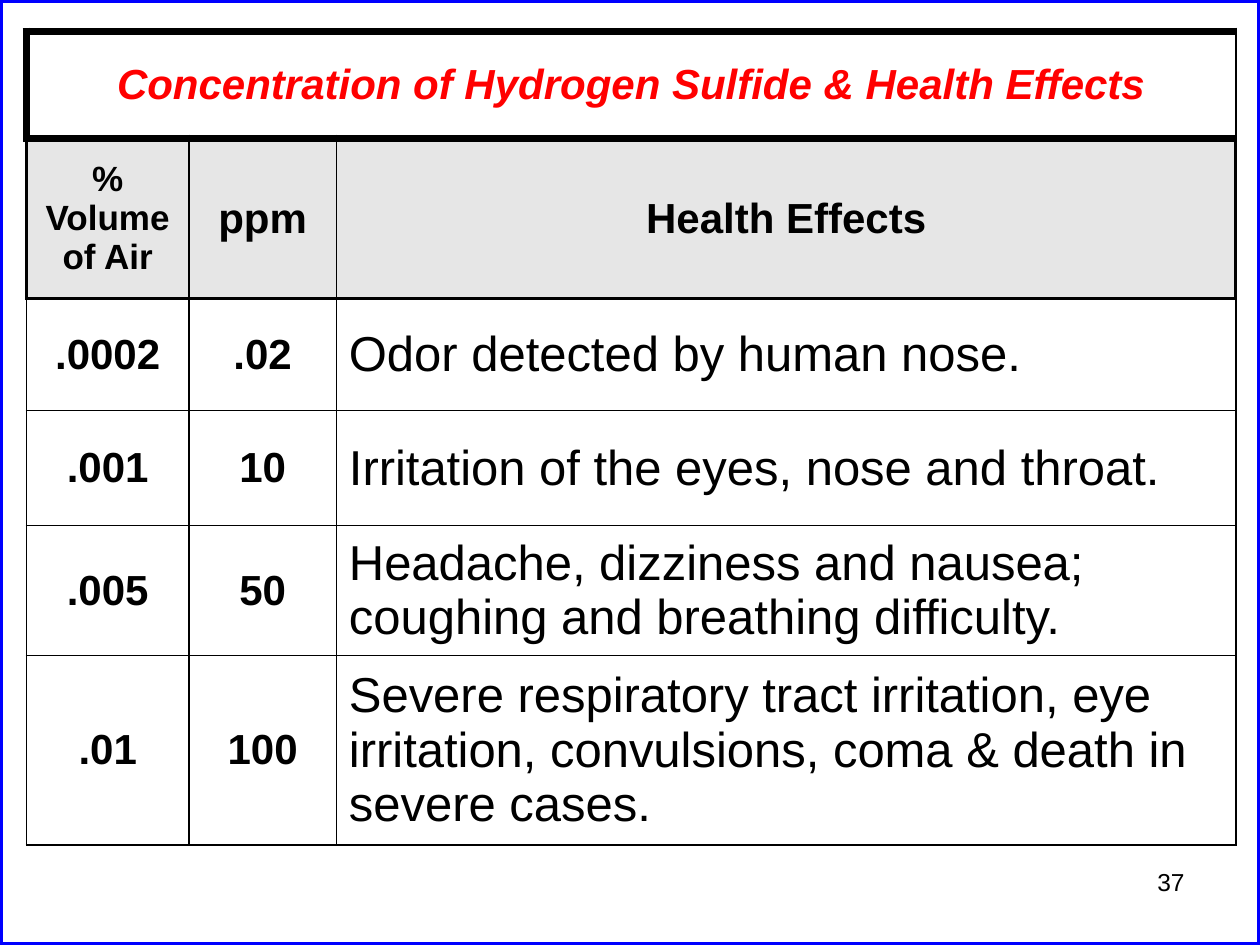
"""Build the slide on hydrogen sulfide concentrations and their health effects."""
from dataclasses import dataclass

from lxml import etree
from pptx import Presentation
from pptx import util as u
from pptx.dml.color import RGBColor
from pptx.enum import shapes, text
from pptx.oxml.ns import qn


@dataclass(frozen=True)
class Theme:
    font: str = "Arial"
    ink: str = "000000"
    accent: str = "FF0000"
    frame: str = "0000FF"
    paper: str = "FFFFFF"
    header: str = "E6E6E6"
    small: int = 14
    label: int = 20
    value: int = 24
    body: int = 28
    thin: int = 1
    medium: int = 2
    heavy: int = 5


@dataclass(frozen=True)
class Style:
    size: int
    color: str = "000000"
    bold: bool = True
    italic: bool = False
    align: text.PP_ALIGN = text.PP_ALIGN.CENTER


@dataclass(frozen=True)
class Row:
    height: float
    texts: tuple[str, ...]
    styles: tuple[Style, ...]
    top: int
    bottom: int
    side: int
    fill: str | None = None


THEME = Theme()
WIDTH, HEIGHT = 10, 7.5
COLUMNS = (1.29, 1.17, 7.14)
VALUE = Style(THEME.value)
EFFECT = Style(THEME.body, bold=False, align=text.PP_ALIGN.LEFT)
TITLE = Style(THEME.value, THEME.accent, italic=True)
NUMBER = Style(THEME.small, bold=False, align=text.PP_ALIGN.RIGHT)
EXPOSURES = (
    (0.89, ".0002", ".02", "Odor detected by human nose."),
    (0.91, ".001", "10", "Irritation of the eyes, nose and throat."),
    (1.03, ".005", "50", "Headache, dizziness and nausea; coughing and breathing difficulty."),
    (1.5, ".01", "100", "Severe respiratory tract irritation, eye irritation, "
     "convulsions, coma & death in severe cases."),
)
ROWS = [
    Row(0.85, ("Concentration of Hydrogen Sulfide & Health Effects", "", ""),
        (TITLE,) * 3, THEME.heavy, THEME.heavy, THEME.heavy),
    Row(1.27, ("% Volume of Air", "ppm", "Health Effects"),
        (Style(THEME.label), VALUE, VALUE),
        THEME.heavy, THEME.medium, THEME.medium, THEME.header),
] + [
    Row(height, tuple(texts), (VALUE, VALUE, EFFECT),
        THEME.thin if index else THEME.medium, THEME.thin, THEME.thin)
    for index, (height, *texts) in enumerate(EXPOSURES)
]


def write(frame, content: str, style: Style) -> None:
    """Write one styled run into the first paragraph of a text frame."""
    paragraph = frame.paragraphs[0]
    paragraph.alignment = style.align
    run = paragraph.add_run()
    run.text = content
    font = run.font
    font.name, font.size = THEME.font, u.Pt(style.size)
    font.bold, font.italic = style.bold, style.italic
    font.color.rgb = RGBColor.from_string(style.color)


def border(cell, **widths: int) -> None:
    """Draw the cell's borders, given in points by side."""
    properties = cell._tc.get_or_add_tcPr()
    for side in "LRTB":
        line = etree.SubElement(properties, qn(f"a:ln{side}"), w=str(u.Pt(widths[side])))
        fill = etree.SubElement(line, qn("a:solidFill"))
        etree.SubElement(fill, qn("a:srgbClr"), val=THEME.ink)


def add_frame(slide) -> None:
    """Outline the whole slide."""
    shape = slide.shapes.add_shape(
        shapes.MSO_SHAPE.RECTANGLE, 0, 0, u.Inches(WIDTH), u.Inches(HEIGHT))
    shape.shadow.inherit = False
    shape.fill.background()
    shape.line.color.rgb = RGBColor.from_string(THEME.frame)
    shape.line.width = u.Pt(3)


def add_page_number(slide, number: str) -> None:
    """Place the page number at the lower right."""
    box = slide.shapes.add_textbox(
        u.Inches(7.17), u.Inches(6.83), u.Inches(2.33), u.Inches(0.52))
    box.text_frame.word_wrap = True
    write(box.text_frame, number, NUMBER)


def fill_row(table, index: int, row: Row) -> None:
    """Set the height, borders, fill and text of one table row."""
    table.rows[index].height = u.Inches(row.height)
    last = len(COLUMNS) - 1
    for column, (content, style) in enumerate(zip(row.texts, row.styles)):
        cell = table.cell(index, column)
        border(cell, L=THEME.thin if column else row.side,
               R=row.side if column == last else THEME.thin,
               T=row.top, B=row.bottom)
        if row.fill:
            cell.fill.solid()
            cell.fill.fore_color.rgb = RGBColor.from_string(row.fill)
        else:
            cell.fill.background()
        cell.vertical_anchor = text.MSO_ANCHOR.MIDDLE
        if content:
            write(cell.text_frame, content, style)


def add_effects_table(slide) -> None:
    """Add the table with its title merged across the first row."""
    table = slide.shapes.add_table(
        len(ROWS), len(COLUMNS), u.Inches(0.21), u.Inches(0.25),
        u.Inches(sum(COLUMNS)), u.Inches(sum(row.height for row in ROWS))).table
    table.first_row = table.horz_banding = False
    for column, width in zip(table.columns, COLUMNS):
        column.width = u.Inches(width)
    for index, row in enumerate(ROWS):
        fill_row(table, index, row)
    table.cell(0, 0).merge(table.cell(0, len(COLUMNS) - 1))


def main() -> None:
    """Create and save the presentation."""
    presentation = Presentation()
    presentation.slide_width, presentation.slide_height = u.Inches(WIDTH), u.Inches(HEIGHT)
    slide = presentation.slides.add_slide(presentation.slide_layouts[6])
    slide.background.fill.solid()
    slide.background.fill.fore_color.rgb = RGBColor.from_string(THEME.paper)
    add_frame(slide)
    add_page_number(slide, "37")
    add_effects_table(slide)
    presentation.save("out.pptx")


if __name__ == "__main__":
    main()
